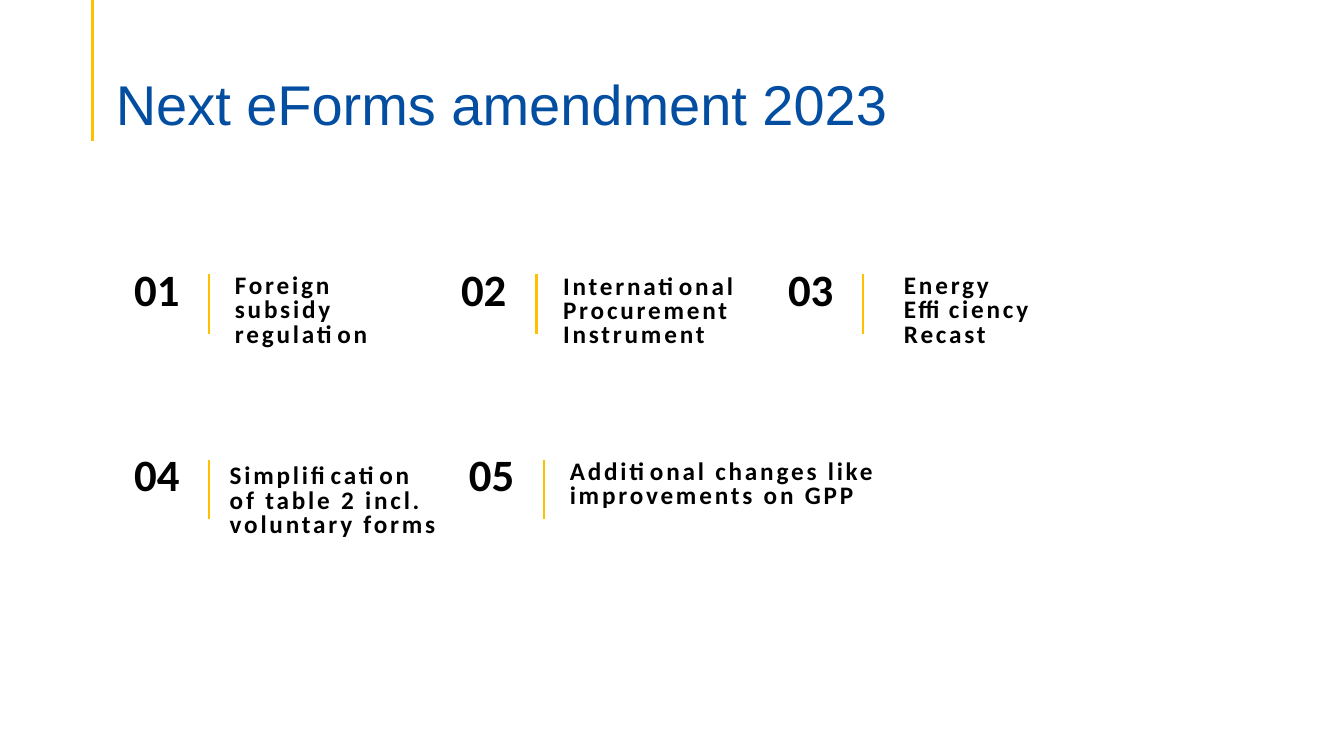
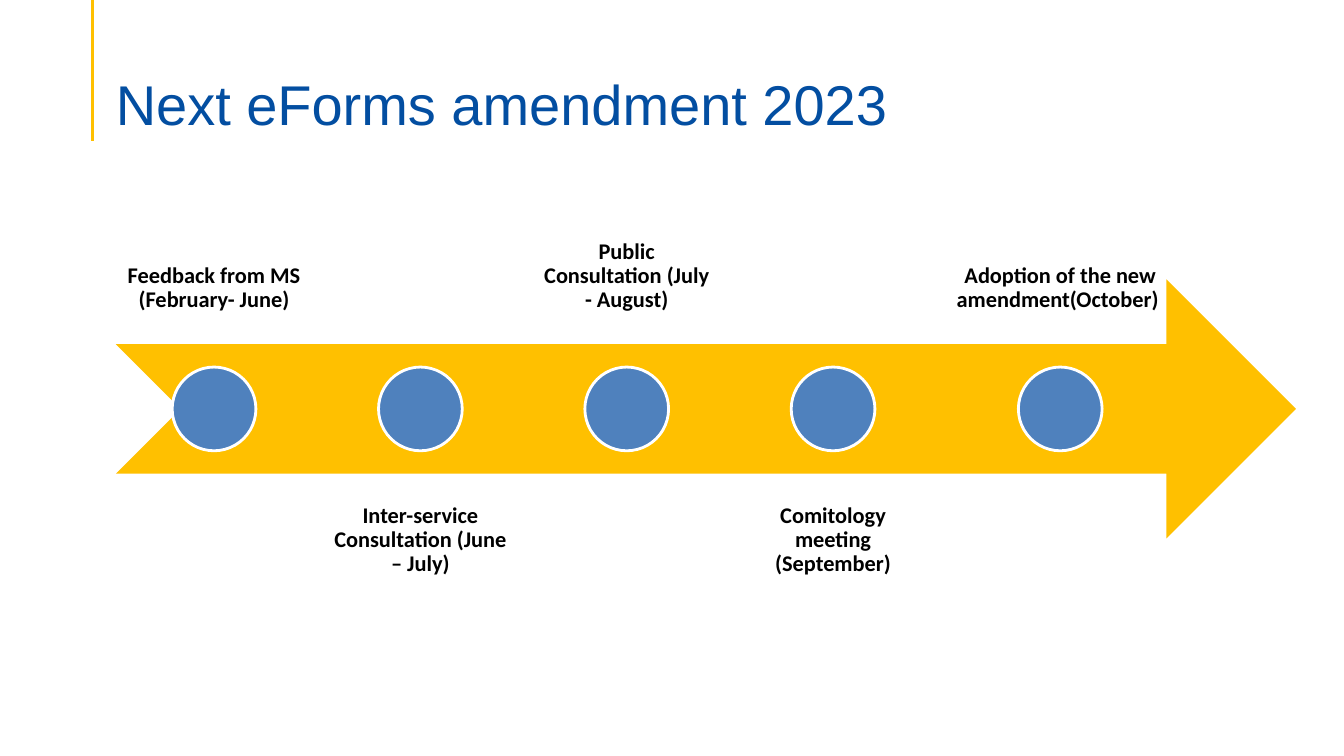
from lxml import etree
from pptx import Presentation
from pptx.dml.color import RGBColor
from pptx.enum import shapes, text
from pptx.oxml import ns
from pptx.util import Cm, Pt

# Shared style
BLUE, GOLD, CIRCLE = "034EA1", "FFC000", "4F81BD"
BLACK, WHITE = "000000", "FFFFFF"
TITLE = "Next eForms amendment 2023"
TITLE_FONT = {"name": "Arial", "size": Pt(40), "bold": False}
NUMBER_FONT = {"name": "Calibri", "size": Pt(32), "bold": True}
LABEL_FONT = {"name": "Calibri", "size": Pt(18), "bold": True}
STEP_FONT = {"name": "Calibri", "size": Pt(16), "bold": True}

# Topics: column, row, shift of the whole item, label offset x and y, label width, lines (cm)
TOPICS = [
    (0, 0, 0, 2.54, 0.08, 4.88, ["Foreign subsidy regulation"]),
    (1, 0, 0, 2.57, 0.1, 4.88, ["International Procurement Instrument"]),
    (2, 0, 0, 2.92, 0.08, 4.88, ["Energy Efficiency Recast"]),
    (0, 1, 0, 2.41, 0.2, 6.05, ["Simplification ", "of table 2 incl. voluntary forms"]),
    (1, 1, 0.2, 2.54, 0.08, 8.05, ["Additional changes like improvements on GPP"]),
]
STEPS = [
    "Feedback from MS (February- June)",
    "Inter-service Consultation (June – July)",
    "Public Consultation (July - August)",
    "Comitology meeting (September)",
    "Adoption of the new amendment(October) ",
]


def color(value):
    return RGBColor.from_string(value)


def set_font(font, style, value):
    for name, setting in style.items():
        setattr(font, name, setting)
    font.color.rgb = color(value)


def set_frame(tf, inset=0, anchor=text.MSO_ANCHOR.TOP):
    settings = {"word_wrap": True, "auto_size": text.MSO_AUTO_SIZE.NONE,
                "vertical_anchor": anchor}
    for side in ("left", "top", "right", "bottom"):
        settings["margin_" + side] = Cm(inset)
    for name, setting in settings.items():
        setattr(tf, name, setting)


def add_line(s, x, top, bottom, width):
    line = s.shapes.add_connector(shapes.MSO_CONNECTOR.STRAIGHT,
                                  Cm(x), Cm(top), Cm(x), Cm(bottom))
    line.line.color.rgb = color(GOLD)
    line.line.width = Pt(width)
    etree.SubElement(line.element.spPr, ns.qn("a:effectLst"))
    return line


def add_text(s, box, lines, style, spacing, align=text.PP_ALIGN.LEFT,
             tracking=0, **frame):
    tf = s.shapes.add_textbox(*map(Cm, box)).text_frame
    set_frame(tf, **frame)
    for i, line in enumerate(lines):
        p = tf.add_paragraph() if i else tf.paragraphs[0]
        p.alignment = align
        p.line_spacing = spacing
        r = p.add_run()
        r.text = line
        set_font(r.font, style, BLACK)
        if tracking:
            r.font._element.set("spc", str(tracking * 100))


def add_shape(s, kind, box, fill, outline=None):
    sp = s.shapes.add_shape(kind, *map(Cm, box))
    sp.shadow.inherit = False
    sp.fill.solid()
    sp.fill.fore_color.rgb = color(fill)
    if outline:
        sp.line.color.rgb = color(outline)
        sp.line.width = Pt(2)
    else:
        sp.line.fill.background()


def add_slide(prs, layout):
    s = prs.slides.add_slide(layout)
    tf = s.shapes.title.text_frame
    set_frame(tf, anchor=text.MSO_ANCHOR.MIDDLE)
    p = tf.paragraphs[0]
    p.alignment = text.PP_ALIGN.LEFT
    r = p.add_run()
    r.text = TITLE
    set_font(r.font, TITLE_FONT, BLUE)
    return s


def set_layout(layout):
    """Place the title for every slide that uses the layout."""
    title = layout.placeholders[0]
    box = {"left": 2.92, "top": 1.75, "width": 23.06, "height": 1.7}
    for name, length in box.items():
        setattr(title, name, Cm(length))


def move_to_layout(line, layout):
    layout.placeholders[0].element.getparent().append(line.element)


def add_topics(s):
    for number, (col, row, shift, dx, dy, width, lines) in enumerate(TOPICS, 1):
        x = 3.38 + 8.24 * col + shift
        y = 6.86 + 4.67 * row
        add_text(s, (x, y, 2.16, 1.1), [f"{number:02}"], NUMBER_FONT, 0.8)
        add_line(s, x + 1.89, y + 0.05, y + 1.56, 2)
        add_text(s, (x + dx, y + dy, width, 1.85), lines, LABEL_FONT, 0.8, tracking=2)


def add_timeline(s):
    add_shape(s, shapes.MSO_SHAPE.NOTCHED_RIGHT_ARROW, (2.92, 7.04, 29.74, 6.53), GOLD)
    height, diameter = 3, 2.11
    for i, step in enumerate(STEPS):
        x = 2.92 + 5.2 * i
        width = 6 if i == len(STEPS) - 1 else 4.95
        # Labels alternate above and below the arrow
        below = i % 2
        top = 12.4 if below else 8.18 - height
        anchor = text.MSO_ANCHOR.TOP if below else text.MSO_ANCHOR.BOTTOM
        add_text(s, (x, top, width, height), [step], STEP_FONT, 0.9,
                 text.PP_ALIGN.CENTER, inset=0.3, anchor=anchor)
        add_shape(s, shapes.MSO_SHAPE.OVAL,
                  (x + (width - diameter) / 2, 9.25, diameter, diameter), CIRCLE, WHITE)


def main():
    prs = Presentation()
    prs.slide_width, prs.slide_height = Cm(33.87), Cm(19.05)
    layout = prs.slide_layouts[5]
    set_layout(layout)

    # Slide 1: topics
    s = add_slide(prs, layout)
    move_to_layout(add_line(s, 2.34, 0, 3.56, 2.25), layout)
    add_topics(s)

    # Slide 2: timeline
    add_timeline(add_slide(prs, layout))
    prs.save("out.pptx")


if __name__ == "__main__":
    main()
